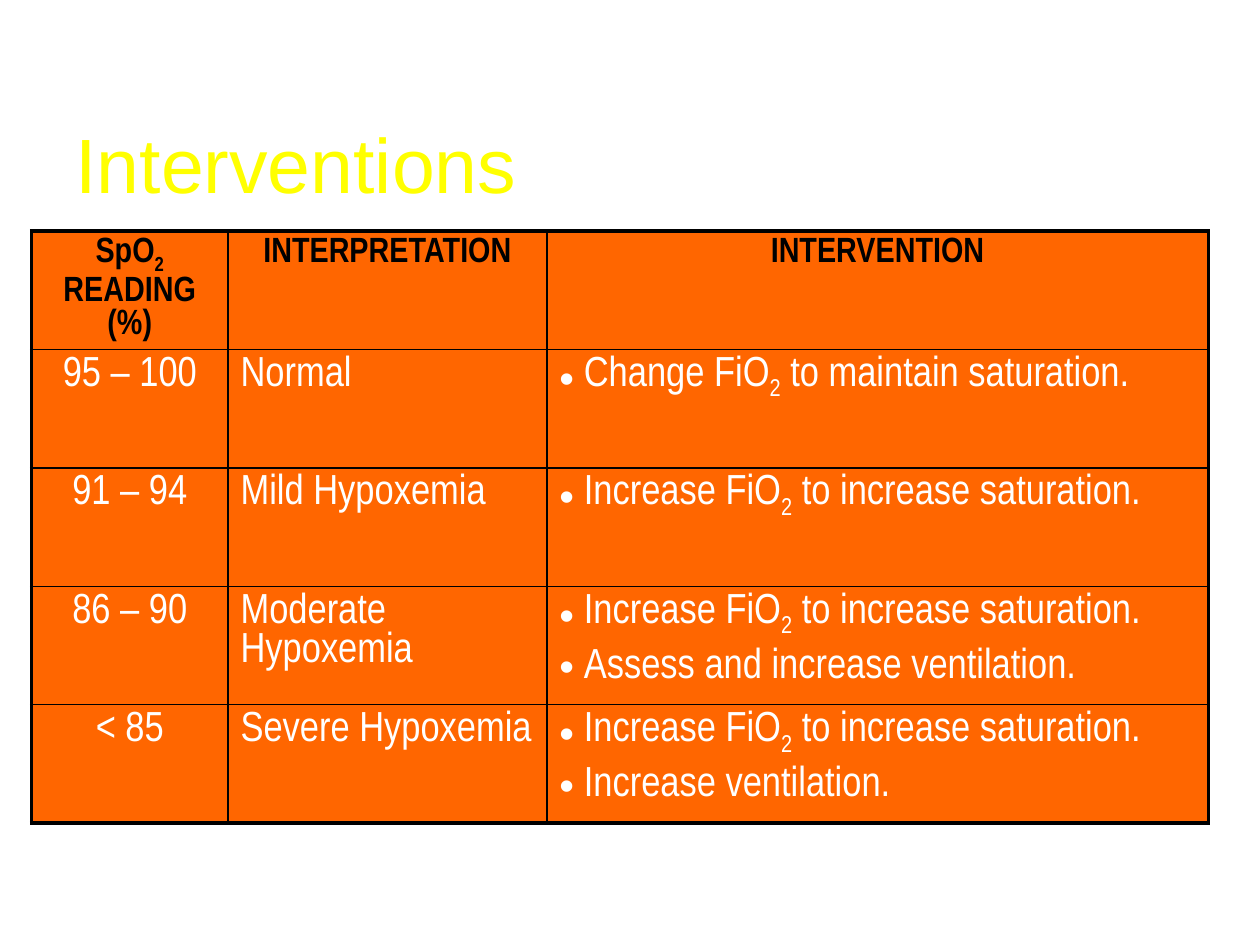
from dataclasses import dataclass

import pptx
import pptx.dml.color
import pptx.enum.text
import pptx.util
from lxml import etree
from pptx.oxml.ns import qn

Pt = pptx.util.Pt
ALIGN = pptx.enum.text.PP_ALIGN


@dataclass(frozen=True)
class Theme:
    title_font: str = "Arial"
    table_font: str = "Arial Narrow"
    title_color: str = "FFFF00"
    header_color: str = "000000"
    body_color: str = "FFFFFF"
    cell_color: str = "FF6600"
    line_color: str = "000000"
    title_size: float = 44
    header_size: float = 20
    body_size: float = 24
    outer_line: float = 2.25
    inner_line: float = 1


THEME = Theme()
COLUMN_WIDTHS = (112.32, 182.16, 378)
ROW_HEIGHT = 67.68
BULLET_INDENT = 14

# Text between tildes is set as a subscript.
HEADERS = ("SpO~2~ READING (%)", "INTERPRETATION", "INTERVENTION")
INCREASE = "Increase FiO~2~ to increase saturation."
READINGS = (
    ("95 – 100", "Normal", ["Change FiO~2~ to maintain saturation."]),
    ("91 – 94", "Mild Hypoxemia", [INCREASE]),
    ("86 – 90", "Moderate Hypoxemia", [INCREASE, "Assess and increase ventilation."]),
    ("< 85", "Severe Hypoxemia", [INCREASE, "Increase ventilation."]),
)


def rgb(color):
    return pptx.dml.color.RGBColor.from_string(color)


def add_bullet(paragraph):
    properties = paragraph._p.get_or_add_pPr()
    properties.set("marL", str(Pt(BULLET_INDENT)))
    properties.set("indent", str(-Pt(BULLET_INDENT)))
    etree.SubElement(properties, qn("a:buFont"), typeface="Arial")
    etree.SubElement(properties, qn("a:buChar"), char="•")


def add_text_shadow(run):
    properties = run._r.get_or_add_rPr()
    effects = etree.Element(qn("a:effectLst"))
    shadow = etree.SubElement(effects, qn("a:outerShdw"), dist=str(Pt(3)), dir="2700000")
    etree.SubElement(shadow, qn("a:srgbClr"), val=THEME.line_color)
    properties.find(qn("a:solidFill")).addnext(effects)


def write_text(paragraph, text, *, font, size, color, bold=False,
               align=ALIGN.LEFT, bullet=False, space_before=0, shadow=False):
    paragraph.alignment = align
    paragraph.space_before = Pt(space_before)
    if bullet:
        add_bullet(paragraph)
    for index, part in enumerate(text.split("~")):
        run = paragraph.add_run()
        run.text = part
        run.font.name = font
        run.font.size = Pt(size)
        run.font.bold = bold
        run.font.color.rgb = rgb(color)
        if index % 2:
            run._r.get_or_add_rPr().set("baseline", "-25000")
        if shadow:
            add_text_shadow(run)


def add_title(slide, text):
    title = slide.shapes.title
    title.left, title.top, title.width, title.height = Pt(36), Pt(48), Pt(648), Pt(90)
    frame = title.text_frame
    frame.auto_size = pptx.enum.text.MSO_AUTO_SIZE.NONE
    frame.vertical_anchor = pptx.enum.text.MSO_ANCHOR.MIDDLE
    write_text(frame.paragraphs[0], text, font=THEME.title_font,
               size=THEME.title_size, color=THEME.title_color, shadow=True)


def style_cell(cell, outer_sides):
    """Draw heavy lines on the table's outside, thin ones inside, then fill."""
    properties = cell._tc.get_or_add_tcPr()
    for side in "LRTB":
        width = THEME.outer_line if side in outer_sides else THEME.inner_line
        line = etree.SubElement(properties, qn(f"a:ln{side}"), w=str(Pt(width)))
        fill = etree.SubElement(line, qn("a:solidFill"))
        etree.SubElement(fill, qn("a:srgbClr"), val=THEME.line_color)
    cell.fill.solid()
    cell.fill.fore_color.rgb = rgb(THEME.cell_color)


def write_cell(cell, content, **text_format):
    lines = content if isinstance(content, list) else [content]
    frame = cell.text_frame
    for index, line in enumerate(lines):
        paragraph = frame.add_paragraph() if index else frame.paragraphs[0]
        write_text(paragraph, line, font=THEME.table_font,
                   bullet=isinstance(content, list),
                   space_before=5 if index else 0, **text_format)


def add_reading_table(slide):
    rows = (HEADERS, *READINGS)
    last_row, last_column = len(rows) - 1, len(COLUMN_WIDTHS) - 1
    table = slide.shapes.add_table(
        len(rows), len(COLUMN_WIDTHS), Pt(18), Pt(132),
        Pt(sum(COLUMN_WIDTHS)), Pt(ROW_HEIGHT * len(rows))).table
    table.first_row = False
    table.horz_banding = False
    for column, width in zip(table.columns, COLUMN_WIDTHS):
        column.width = Pt(width)
    for row_index, contents in enumerate(rows):
        table.rows[row_index].height = Pt(ROW_HEIGHT)
        header = row_index == 0
        for column_index, content in enumerate(contents):
            cell = table.cell(row_index, column_index)
            edges = {"L": column_index == 0, "R": column_index == last_column,
                     "T": header, "B": row_index == last_row}
            style_cell(cell, [side for side, outer in edges.items() if outer])
            write_cell(cell, content, bold=header,
                       size=THEME.header_size if header else THEME.body_size,
                       color=THEME.header_color if header else THEME.body_color,
                       align=ALIGN.CENTER if header or column_index == 0 else ALIGN.LEFT)


def main():
    presentation = pptx.Presentation()
    presentation.slide_width, presentation.slide_height = Pt(720), Pt(540)
    slide = presentation.slides.add_slide(presentation.slide_layouts[5])
    # Heading
    add_title(slide, "Interventions")
    # Saturation readings with their interventions
    add_reading_table(slide)
    presentation.save("out.pptx")


if __name__ == "__main__":
    main()
